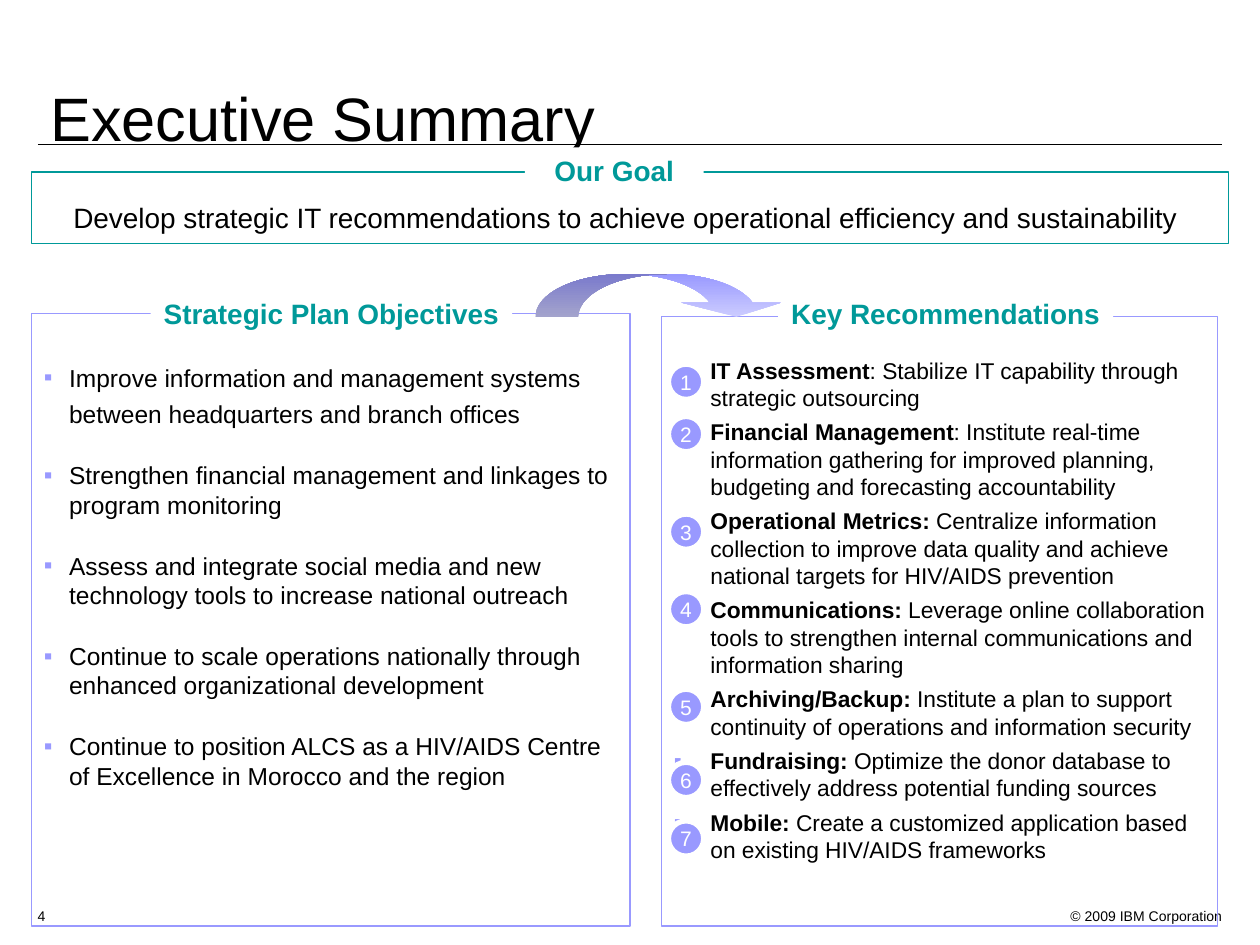
from lxml import etree
from pptx import Presentation
from pptx.dml.color import RGBColor
from pptx.enum.shapes import MSO_CONNECTOR, MSO_SHAPE
from pptx.enum.text import MSO_ANCHOR, PP_ALIGN
from pptx.oxml.ns import qn
from pptx.util import Inches, Pt

RECT, OVAL, ARROW = MSO_SHAPE.RECTANGLE, MSO_SHAPE.OVAL, MSO_SHAPE.CURVED_UP_ARROW
STRAIGHT = MSO_CONNECTOR.STRAIGHT
LEFT, CENTER, RIGHT = PP_ALIGN.LEFT, PP_ALIGN.CENTER, PP_ALIGN.RIGHT
TOP, MIDDLE, BOTTOM = MSO_ANCHOR.TOP, MSO_ANCHOR.MIDDLE, MSO_ANCHOR.BOTTOM
BLACK = RGBColor(0x00, 0x00, 0x00)
WHITE = RGBColor(0xFF, 0xFF, 0xFF)
TEAL = RGBColor(0x00, 0x99, 0x99)
LILAC = RGBColor(0x99, 0x99, 0xFF)
PALE_LILAC = RGBColor(0xCC, 0xCC, 0xFF)
COLUMNS, ROWS = 100, 75

OBJECTIVES = [
    "Improve information and management systems between headquarters and branch offices",
    "Strengthen financial management and linkages to program monitoring",
    "Assess and integrate social media and new technology tools to increase national outreach",
    "Continue to scale operations nationally through enhanced organizational development",
    "Continue to position ALCS as a HIV/AIDS Centre of Excellence in Morocco and the region",
]
RECOMMENDATIONS = [
    ("IT Assessment", ": Stabilize IT capability through strategic outsourcing", 28.9),
    ("Financial Management", ": Institute real-time information gathering for improved "
     "planning, budgeting and forecasting accountability", 33.05),
    ("Operational Metrics:", " Centralize information collection to improve data quality "
     "and achieve national targets for HIV/AIDS prevention", 40.8),
    ("Communications:", " Leverage online collaboration tools to strengthen internal "
     "communications and information sharing", 46.95),
    ("Archiving/Backup:", " Institute a plan to support continuity of operations and "
     "information security", 54.7),
    ("Fundraising:", " Optimize the donor database to effectively address potential "
     "funding sources", 60.5),
    ("Mobile:", " Create a customized application based on existing HIV/AIDS frameworks", 65.15),
]


class SummarySlide:
    """Draws styled elements on one slide, placed on a grid of columns and rows."""

    def __init__(self, deck):
        self.font = "Arial"
        self.column = deck.slide_width / COLUMNS
        self.row = deck.slide_height / ROWS
        self.slide = deck.slides.add_slide(deck.slide_layouts[5])

    def area(self, x, y, width, height):
        return (round(x * self.column), round(y * self.row),
                round(width * self.column), round(height * self.row))

    def style(self, paragraph, size, color, bold=False, align=LEFT):
        paragraph.alignment = align
        for run in paragraph.runs:
            run.font.name, run.font.size, run.font.bold = self.font, Pt(size), bold
            run.font.color.rgb = color

    def frame(self, shape, anchor=TOP, wrap=True, inset_top=0.05):
        frame = shape.text_frame
        frame.word_wrap, frame.vertical_anchor = wrap, anchor
        frame.margin_left = frame.margin_right = Inches(0.1)
        frame.margin_top, frame.margin_bottom = Inches(inset_top), Inches(0.05)
        return frame

    def title(self, text, area):
        title = self.slide.shapes.title
        title.left, title.top, title.width, title.height = self.area(*area)
        frame = self.frame(title, BOTTOM)
        frame.text = text
        frame.paragraphs[0].line_spacing = 0.9
        self.style(frame.paragraphs[0], 35, BLACK)

    def rule(self, x, y, width):
        left, top, length, _ = self.area(x, y, width, 0)
        rule = self.slide.shapes.add_connector(STRAIGHT, left, top, left + length, top)
        rule.line.color.rgb, rule.line.width = BLACK, Pt(0.75)
        etree.SubElement(rule._element.spPr, qn("a:effectLst"))

    def note(self, text, area, align=LEFT):
        frame = self.frame(self.slide.shapes.add_textbox(*self.area(*area)))
        frame.text = text
        self.style(frame.paragraphs[0], 8, BLACK, align=align)

    def shape(self, kind, area, fill=None, line=None, line_width=0.75):
        shape = self.slide.shapes.add_shape(kind, *self.area(*area))
        shape.shadow.inherit = False
        if fill is None:
            shape.fill.background()
        else:
            shape.fill.solid()
            shape.fill.fore_color.rgb = fill
        if line is None:
            shape.line.fill.background()
        else:
            shape.line.color.rgb, shape.line.width = line, Pt(line_width)
        return shape

    def panel(self, area, line, inset_top):
        return self.frame(self.shape(RECT, area, line=line), inset_top=inset_top)

    def heading(self, text, area):
        frame = self.frame(self.shape(RECT, area, fill=WHITE), MIDDLE, wrap=False)
        frame.text = text
        self.style(frame.paragraphs[0], 16, TEAL, bold=True, align=CENTER)

    def bullets(self, frame, items, size, indent, gap):
        for index, parts in enumerate(items):
            paragraph = frame.add_paragraph() if index else frame.paragraphs[0]
            properties = paragraph._p.get_or_add_pPr()
            properties.set("marL", str(Inches(indent)))
            properties.set("indent", str(-Inches(indent)))
            bullet_color = etree.SubElement(properties, qn("a:buClr"))
            etree.SubElement(bullet_color, qn("a:srgbClr"), val=str(LILAC))
            etree.SubElement(properties, qn("a:buFont"), typeface=self.font)
            etree.SubElement(properties, qn("a:buChar"), char="▪")
            for part in parts:
                paragraph.add_run().text = part
            self.style(paragraph, size, BLACK)
            paragraph.runs[0].font.bold = len(parts) > 1
            paragraph.space_before = Pt(gap if index else 0)

    def arrow(self, area):
        arrow = self.shape(ARROW, area)
        arrow._element.spPr.find(qn("a:xfrm")).set("flipV", "1")
        for index, share in enumerate((1.163, 2.327, 0.333)):
            arrow.adjustments[index] = share
        arrow.fill.gradient()
        arrow.fill.gradient_angle = 270
        for stop, color in zip(arrow.fill.gradient_stops, (PALE_LILAC, LILAC)):
            stop.color.rgb = color

    def badge(self, number, x, y):
        circle = self.shape(OVAL, (x, y, 2.8, 2.8), LILAC, WHITE, 3)
        frame = self.frame(circle, MIDDLE, wrap=False)
        frame.text = str(number)
        self.style(frame.paragraphs[0], 12, WHITE, align=CENTER)


def main():
    deck = Presentation()
    deck.slide_width, deck.slide_height = Inches(10), Inches(7.5)
    summary = SummarySlide(deck)
    summary.rule(3, 11.46, 94)
    summary.note("© 2009 IBM Corporation", (83, 71.5, 15, 2), RIGHT)
    summary.title("Executive Summary", (3, 5.3, 62.6, 7.5))
    summary.note("4", (2, 71.5, 4, 2))

    goal = summary.panel((2.5, 13.65, 95, 5.7), TEAL, 0.23)
    goal.margin_right = Inches(0.17)
    goal.text = "Develop strategic IT recommendations to achieve operational efficiency and sustainability"
    summary.style(goal.paragraphs[0], 16, BLACK, align=CENTER)
    summary.heading("Our Goal", (41.65, 11.7, 14.2, 3.7))

    objectives = summary.panel((2.5, 24.9, 47.5, 48.6), LILAC, 0.33)
    summary.bullets(objectives, [(text,) for text in OBJECTIVES], 14, 0.2, 18)
    objectives.paragraphs[0].line_spacing = 1.25
    summary.heading("Strategic Plan Objectives", (11.95, 23, 28.7, 3.7))

    recommendations = summary.panel((52.5, 25.1, 44.15, 48.4), LILAC, 0.32)
    summary.bullets(recommendations, [item[:2] for item in RECOMMENDATIONS], 13, 0.29, 4)
    summary.heading("Key Recommendations", (61.75, 23, 26.6, 3.7))

    summary.arrow((42.5, 21.75, 19.9, 3.4))
    for number, (_, _, y) in enumerate(RECOMMENDATIONS, 1):
        summary.badge(number, 53.05, y)
    deck.save("out.pptx")


if __name__ == "__main__":
    main()
